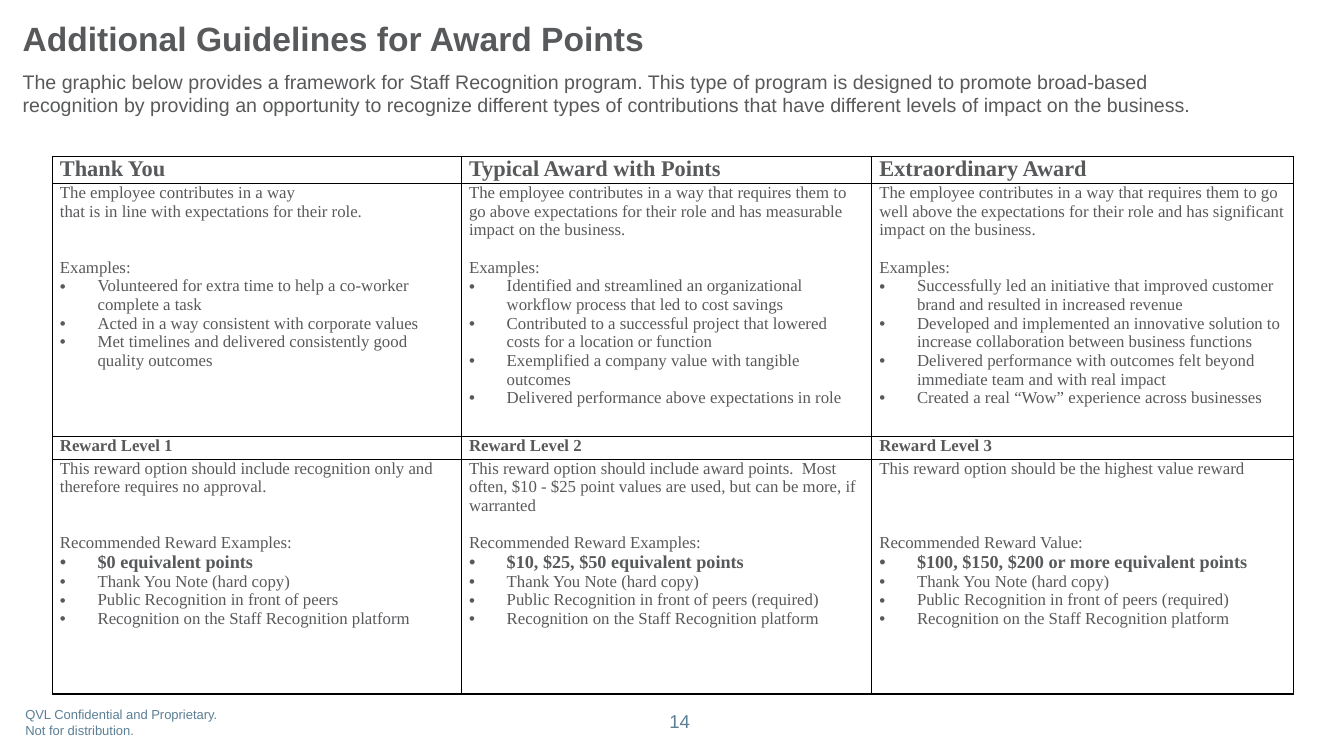
from lxml.etree import SubElement as Sub
from pptx import Presentation
from pptx.dml.color import RGBColor
from pptx.enum.text import MSO_ANCHOR as Anchor, PP_ALIGN as Align
from pptx.oxml.ns import qn
from pptx.util import Cm, Pt

SANS, SERIF = "Arial", "Times New Roman"
GRAY, BLUE, BLACK = "58595B", "5B7F95", "000000"
LINE = 13.3
WIDTHS = [10.31, 10.34, 10.62]
HEIGHTS = [0.69, 6.38, 0.56, 5.92]
NOTE = "Thank You Note (hard copy)"
PEERS = "Public Recognition in front of peers"
SITE = "Recognition on the Staff Recognition platform"

AWARDS = [
    dict(
        name="Thank You",
        intro=["The employee contributes in a way",
               "that is in line with expectations for their role."],
        gap=2,
        cases=["Volunteered for extra time to help a co-worker complete a task",
               "Acted in a way consistent with corporate values",
               "Met timelines and delivered consistently good quality outcomes"],
        level="Reward Level 1",
        option="This reward option should include recognition only and "
               "therefore requires no approval.",
        space=2,
        label="Recommended Reward Examples:",
        points="$0 equivalent points",
        perks=[NOTE, PEERS, SITE]),
    dict(
        name="Typical Award with Points",
        intro=["The employee contributes in a way that requires them to go above "
               "expectations for their role and has measurable impact on the business."],
        gap=1,
        cases=["Identified and streamlined an organizational workflow process "
               "that led to cost savings",
               "Contributed to a successful project that lowered costs for a "
               "location or function",
               "Exemplified a company value with tangible outcomes",
               "Delivered performance above expectations in role"],
        level="Reward Level 2",
        option="This reward option should include award points.  Most often, "
               "$10 - $25 point values are used, but can be more, if warranted",
        space=1,
        label="Recommended Reward Examples:",
        points="$10, $25, $50 equivalent points",
        perks=[NOTE, PEERS + " (required)", SITE]),
    dict(
        name="Extraordinary Award",
        intro=["The employee contributes in a way that requires them to go well above "
               "the expectations for their role and has significant impact on the business."],
        gap=1,
        cases=["Successfully led an initiative that improved customer brand and "
               "resulted in increased revenue",
               "Developed and implemented an innovative solution to increase "
               "collaboration between business functions",
               "Delivered performance with outcomes felt beyond immediate team "
               "and with real impact",
               "Created a real “Wow” experience across businesses"],
        level="Reward Level 3",
        option="This reward option should be the highest value reward",
        space=3,
        label="Recommended Reward Value:",
        points="$100, $150, $200 or more equivalent points",
        perks=[NOTE, PEERS + " (required)", SITE]),
]


def paint(code):
    """Turn a hex string into a colour."""
    return RGBColor.from_string(code)


def write(frame, text, size, face, color, bold=False, gap=0, dot=False):
    """Add one paragraph with one run to a text frame."""
    para = frame.paragraphs[0]
    if para.runs:
        para = frame.add_paragraph()
    if dot:
        props = para._p.get_or_add_pPr()
        props.set("marL", str(Cm(0.95)))
        props.set("indent", str(-Cm(0.95)))
        Sub(props, qn("a:buFont"), typeface=SANS)
        Sub(props, qn("a:buChar"), char="•")
    if gap:
        para.space_before = Pt(gap * LINE)
    run = para.add_run()
    run.text = text
    font = run.font
    font.size, font.name, font.bold = Pt(size), face, bold
    font.color.rgb = paint(color)
    return para


def label(slide, box, lines, size, color, bold=False, inset=(0.25, 0.13)):
    """Place a wrapped text box and return its frame."""
    frame = slide.shapes.add_textbox(*map(Cm, box)).text_frame
    frame.word_wrap = True
    frame.margin_left = frame.margin_right = Cm(inset[0])
    frame.margin_top = frame.margin_bottom = Cm(inset[1])
    for line in lines:
        write(frame, line, size, SANS, color, bold)
    return frame


def header(slide, left, top):
    """Place the title and the lead text below it."""
    label(slide, (left, top, 18.62, 1.27),
          ["Additional Guidelines for Award Points"], 24, GRAY, True)
    label(slide, (left, top + 1.3, 30.81, 1.45),
          ["The graphic below provides a framework for Staff Recognition program. "
           "This type of program is designed to promote broad-based recognition by "
           "providing an opportunity to recognize different types of contributions "
           "that have different levels of impact on the business."], 14, GRAY)


def footer(slide, left, top):
    """Place the notice and the page number."""
    label(slide, (left, top + 0.1, 6.3, 1.3),
          ["QVL Confidential and Proprietary.", "Not for distribution."],
          9.3, BLUE, inset=(0.13, 0.05))
    frame = label(slide, (left + 12.67, top, 7.9, 1.02), ["14"], 13.3, BLUE)
    frame.vertical_anchor = Anchor.MIDDLE
    frame.paragraphs[0].alignment = Align.CENTER


def border(cell):
    """Draw thin black lines on all sides of a cell."""
    props = cell._tc.get_or_add_tcPr()
    for side in "LRTB":
        line = Sub(props, qn("a:ln" + side), w=str(Pt(1)))
        Sub(Sub(line, qn("a:solidFill")), qn("a:srgbClr"), val=BLACK)


def content(award):
    """List the paragraphs of each row as text and style."""
    intro = [(line, {}) for line in award["intro"]]
    cases = [(line, dict(dot=True)) for line in award["cases"]]
    perks = [(line, dict(dot=True)) for line in award["perks"]]
    return [
        [(award["name"], dict(size=16, bold=True))],
        intro + [("Examples:", dict(gap=award["gap"]))] + cases,
        [(award["level"], dict(bold=True))],
        [(award["option"], {}),
         (award["label"], dict(gap=award["space"])),
         (award["points"], dict(size=13, bold=True, dot=True))] + perks,
    ]


def matrix(slide, left, top):
    """Place the award table, one column per award."""
    table = slide.shapes.add_table(
        len(HEIGHTS), len(WIDTHS), Cm(left), Cm(top),
        Cm(sum(WIDTHS)), Cm(sum(HEIGHTS))).table
    table.first_row = table.horz_banding = False
    for row, height in zip(table.rows, HEIGHTS):
        row.height = Cm(height)
    for col, (width, award) in enumerate(zip(WIDTHS, AWARDS)):
        table.columns[col].width = Cm(width)
        for row, lines in enumerate(content(award)):
            cell = table.cell(row, col)
            cell.margin_left = cell.margin_right = Cm(0.19)
            cell.margin_top = cell.margin_bottom = 0
            border(cell)
            cell.fill.background()
            for text, style in lines:
                look = dict(size=12, face=SERIF, color=GRAY) | style
                write(cell.text_frame, text, **look)


def main():
    """Build and save the slide."""
    deck = Presentation()
    deck.slide_width, deck.slide_height = Cm(33.87), Cm(19.05)
    slide = deck.slides.add_slide(deck.slide_layouts[6])
    header(slide, 0.32, 0.33)
    matrix(slide, 1.32, 3.94)
    footer(slide, 0.51, 17.65)
    deck.save("out.pptx")


if __name__ == "__main__":
    main()
